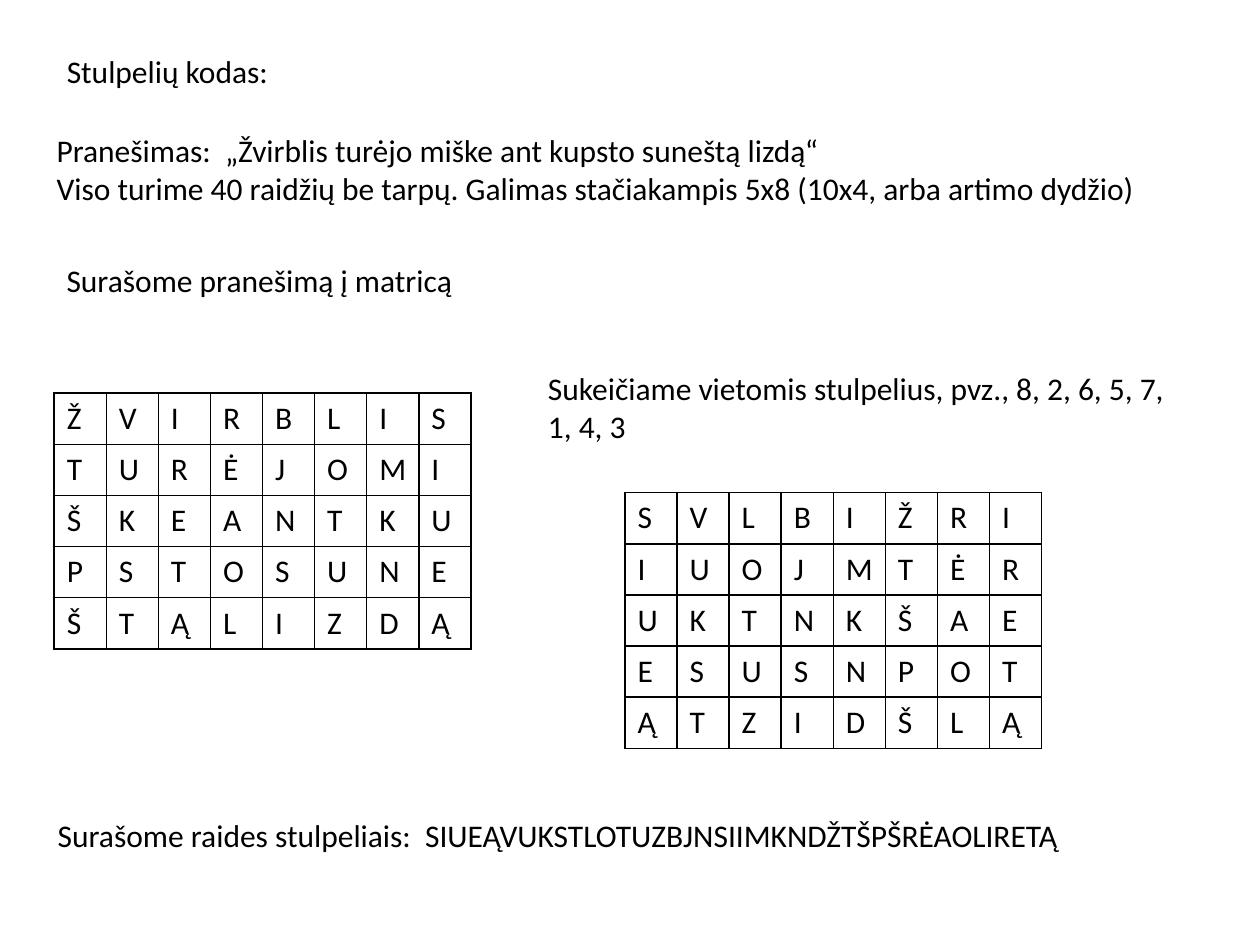
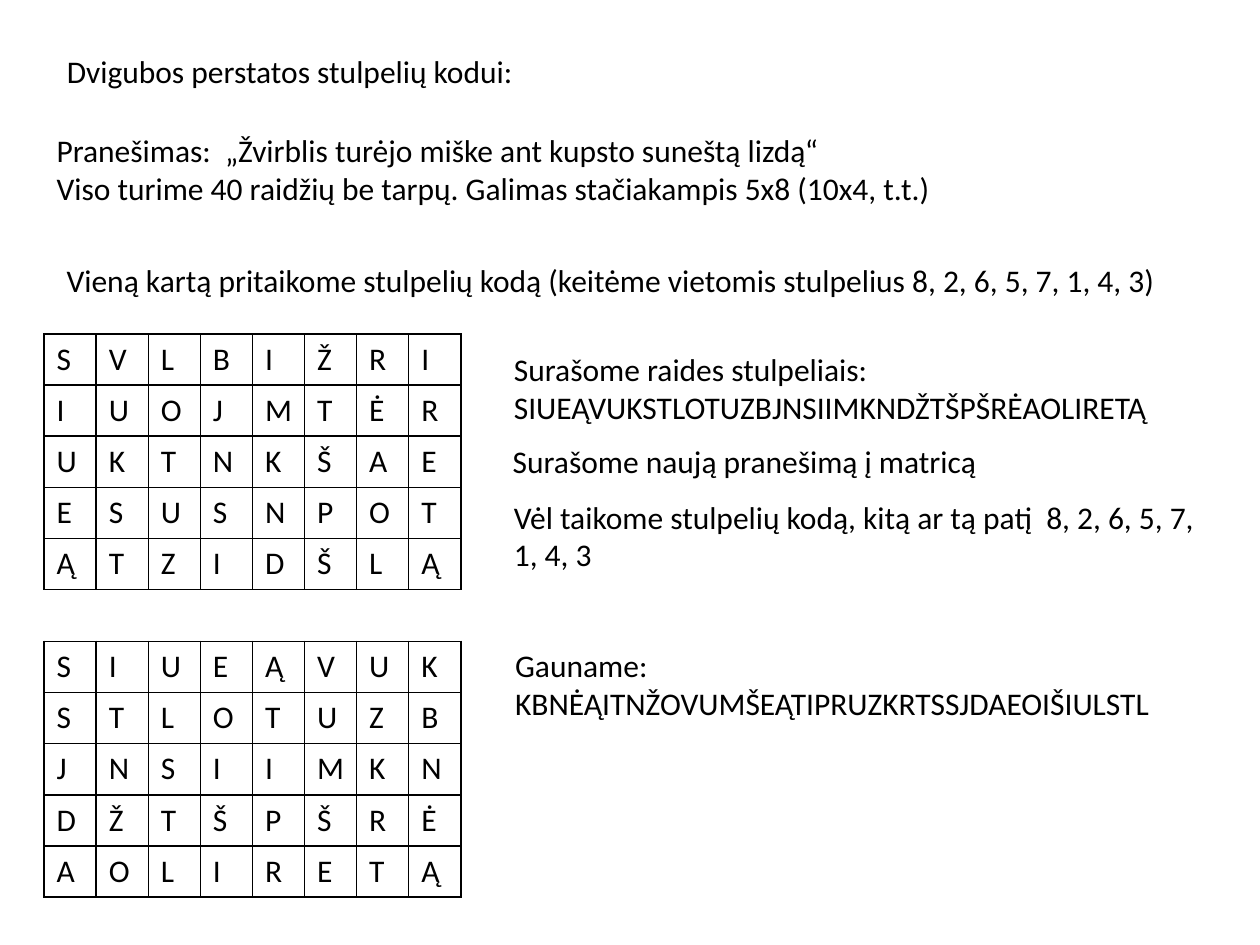
from lxml.etree import SubElement
from pptx import Presentation
from pptx.dml.color import RGBColor
from pptx.enum.text import MSO_ANCHOR as Anchor, MSO_AUTO_SIZE as AutoSize, PP_ALIGN as Align
from pptx.oxml.ns import qn
from pptx.util import Inches, Pt

BLACK = RGBColor(0x00, 0x00, 0x00)
WHITE = RGBColor(0xFF, 0xFF, 0xFF)
FONT = "Calibri"
TITLE_ONLY = 5

MESSAGE = "Žvirblis turėjo miške ant kupsto suneštą lizdą"
KEY = (8, 2, 6, 5, 7, 1, 4, 3)
KEY_TEXT = ", ".join(map(str, KEY))


def write_text(frame, *lines, size=18, color=BLACK, font=FONT, align=Align.LEFT):
    for index, line in enumerate(lines):
        paragraph = frame.add_paragraph() if index else frame.paragraphs[0]
        paragraph.alignment = align
        run = paragraph.add_run()
        run.text = line
        run.font.size = Pt(size)
        run.font.name = font
        run.font.color.rgb = color


def fill_matrix(letters):
    width = len(KEY)
    return [letters[start:start + width] for start in range(0, len(letters), width)]


def swap_columns(matrix):
    return ["".join(row[column - 1] for column in KEY) for row in matrix]


def read_columns(matrix):
    return "".join("".join(column) for column in zip(*matrix))


class CipherDeck:
    matrix_width = Inches(3.31)
    matrix_height = Inches(2.03)
    border_width = Pt(1)

    def __init__(self):
        self.presentation = Presentation()
        self.presentation.slide_width = Inches(10)
        self.presentation.slide_height = Inches(7.5)
        self.slide = None

    def add_slide(self, title, size_note):
        layout = self.presentation.slide_layouts[TITLE_ONLY]
        self.slide = self.presentation.slides.add_slide(layout)
        self.place_text(self.slide.shapes.title, (0.43, 0.36, 8.66, 0.4), title)
        self.add_text((0.35, 0.99, 9.21, 0.71), f"Pranešimas:  „{MESSAGE}“",
                      f"Viso turime 40 raidžių be tarpų. Galimas stačiakampis 5x8 ({size_note})")

    def place_text(self, shape, box, *lines):
        shape.left, shape.top, shape.width, shape.height = map(Inches, box)
        frame = shape.text_frame
        frame.word_wrap = True
        frame.auto_size = AutoSize.NONE
        frame.vertical_anchor = Anchor.TOP
        write_text(frame, *lines)

    def add_text(self, box, *lines):
        shape = self.slide.shapes.add_textbox(0, 0, 0, 0)
        self.place_text(shape, box, *lines)

    def add_matrix(self, left, top, matrix):
        shape = self.slide.shapes.add_table(
            len(matrix), len(KEY), Inches(left), Inches(top),
            self.matrix_width, self.matrix_height)
        table = shape.table
        table.first_row = table.horz_banding = False
        for cell, letter in zip(table.iter_cells(), "".join(matrix)):
            write_text(cell.text_frame, letter)
            self.draw_borders(cell)
            cell.fill.solid()
            cell.fill.fore_color.rgb = WHITE

    def draw_borders(self, cell):
        properties = cell._tc.get_or_add_tcPr()
        for side in ("lnL", "lnR", "lnT", "lnB"):
            line = SubElement(properties, qn(f"a:{side}"), w=str(self.border_width))
            fill = SubElement(line, qn("a:solidFill"))
            SubElement(fill, qn("a:srgbClr"), val=str(BLACK))


def main():
    message_matrix = fill_matrix(MESSAGE.replace(" ", "").upper())
    swapped_matrix = swap_columns(message_matrix)
    first_cipher = read_columns(swapped_matrix)
    second_matrix = fill_matrix(first_cipher)
    second_cipher = read_columns(swap_columns(second_matrix))

    deck = CipherDeck()

    deck.add_slide("Stulpelių kodas:", "10x4, arba artimo dydžio")
    deck.add_matrix(0.43, 3.12, message_matrix)
    deck.add_text((0.43, 2.02, 8.66, 0.4), "Surašome pranešimą į matricą")
    deck.add_text((4.25, 2.88, 5.28, 0.71), f"Sukeičiame vietomis stulpelius, pvz., {KEY_TEXT}")
    deck.add_matrix(4.96, 3.91, swapped_matrix)
    deck.add_text((0.36, 6.43, 9.36, 0.4), f"Surašome raides stulpeliais:  {first_cipher}")

    deck.add_slide("Dvigubos perstatos stulpelių kodui:", "10x4, t.t.")
    deck.add_text((0.43, 2.02, 9.13, 0.71),
                  f"Vieną kartą pritaikome stulpelių kodą (keitėme vietomis stulpelius {KEY_TEXT})")
    deck.add_matrix(0.35, 2.65, swapped_matrix)
    deck.add_text((3.98, 2.73, 5.75, 0.71), f"Surašome raides stulpeliais: {first_cipher}")
    deck.add_text((3.97, 3.46, 5.75, 0.4), "Surašome naują pranešimą į matricą")
    deck.add_matrix(0.35, 5.09, second_matrix)
    deck.add_text((3.98, 3.9, 5.83, 1.01),
                  f"Vėl taikome stulpelių kodą, kitą ar tą patį  {KEY_TEXT}")
    deck.add_text((3.99, 5.08, 5.83, 1.01), f"Gauname: {second_cipher}")

    deck.presentation.save("out.pptx")


if __name__ == "__main__":
    main()
